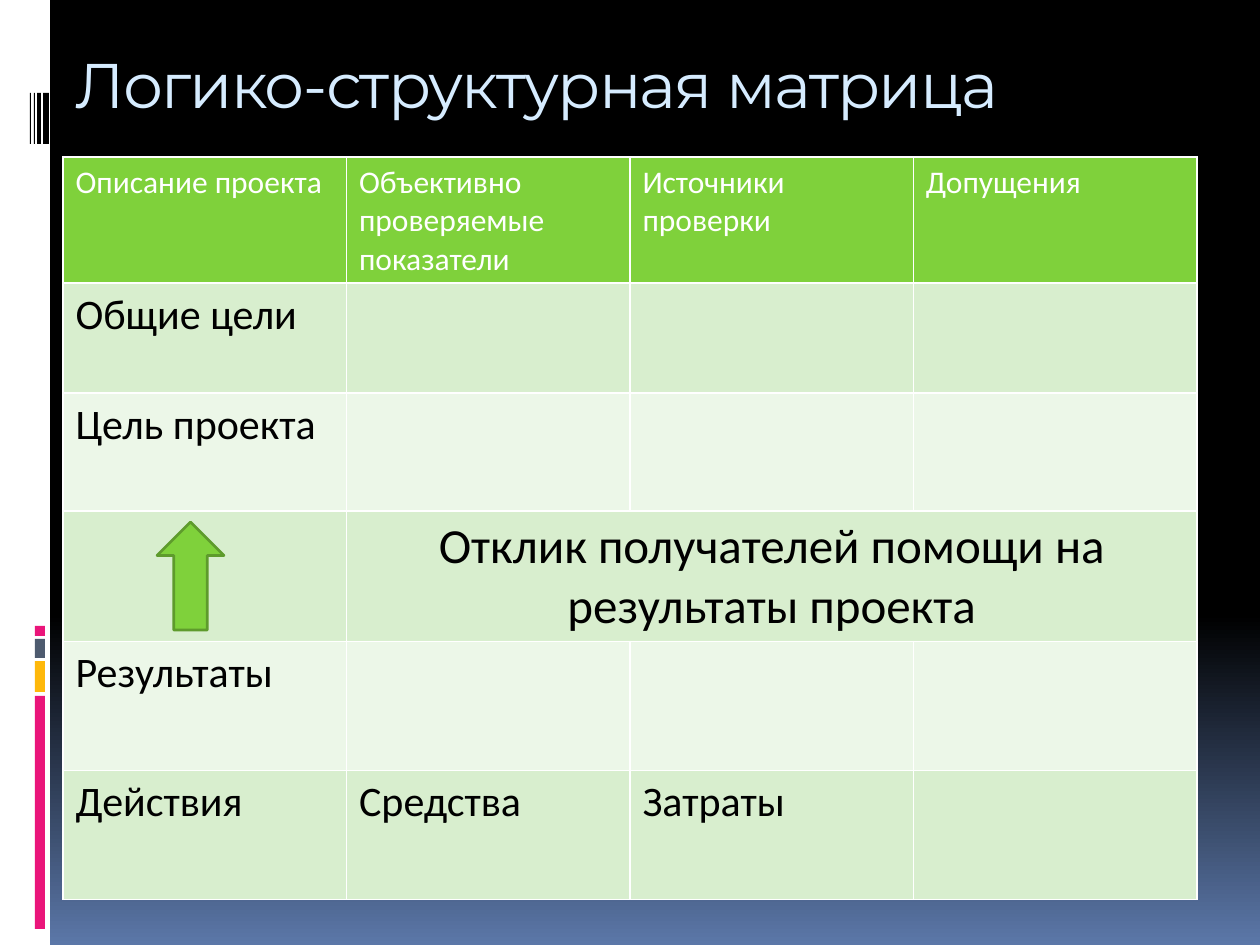
from copy import deepcopy

from lxml.etree import SubElement
from pptx import Presentation
from pptx.dml.color import RGBColor
from pptx.enum.shapes import MSO_SHAPE
from pptx.enum.text import MSO_ANCHOR, PP_ALIGN
from pptx.oxml.ns import qn
from pptx.util import Emu, Pt

EMU_PER_PX = 914400 // 126
WHITE, BLACK, GREEN = "FFFFFF", "000000", "7FD13B"
BANDS = ["D8EECE", "ECF7E8"]


def px(length):
    return Emu(length * EMU_PER_PX)


def color(hex_code):
    return RGBColor.from_string(hex_code)


def write(frame, text, *, size, font="Calibri", ink=BLACK,
          align=PP_ALIGN.LEFT, spacing=None):
    para = frame.paragraphs[0]
    para.alignment = align
    span = para.add_run()
    span.text = text
    span.font.size = Pt(size)
    span.font.name = font
    span.font.bold = False
    span.font.color.rgb = color(ink)
    if spacing is not None:
        span.font._element.set("spc", str(spacing * 100))


class Painter:
    def __init__(self, page):
        self.page = page

    def background(self, stops):
        fill = self.page.background.fill
        fill.gradient()
        fill.gradient_angle = 270
        stop_list = self.page.element.find(".//" + qn("a:gsLst"))
        while len(stop_list) < len(stops):
            stop_list.append(deepcopy(stop_list[-1]))
        for stop, (position, hex_code) in zip(fill.gradient_stops, stops):
            stop.position = position
            stop.color.rgb = color(hex_code)

    def shape(self, kind, left, top, width, height, fill, line=None):
        shape = self.page.shapes.add_shape(
            kind, px(left), px(top), px(width), px(height))
        shape.shadow.inherit = False
        shape.fill.solid()
        shape.fill.fore_color.rgb = color(fill)
        if line:
            shape.line.color.rgb = color(line)
            shape.line.width = Pt(1.5)
        else:
            shape.line.fill.background()

    def title(self, text, left, top, width, height):
        box = self.page.shapes.add_textbox(
            px(left), px(top), px(width), px(height))
        frame = box.text_frame
        frame.word_wrap = True
        frame.vertical_anchor = MSO_ANCHOR.TOP
        frame.margin_top = px(8)
        write(frame, text, size=36, font="Montserrat", ink="D6ECFF", spacing=-1)

    def cell(self, cell, fill):
        properties = cell._tc.get_or_add_tcPr()
        for side in ("lnL", "lnR", "lnT", "lnB"):
            border = SubElement(properties, qn("a:" + side), w=str(Pt(1)))
            paint = SubElement(border, qn("a:solidFill"))
            SubElement(paint, qn("a:srgbClr"), val=WHITE)
        cell.fill.solid()
        cell.fill.fore_color.rgb = color(fill)

    def table(self, left, top, width, height, row_heights, columns):
        frame = self.page.shapes.add_table(
            len(row_heights), columns, px(left), px(top), px(width), px(height))
        table = frame.table
        for row_index, row_height in enumerate(row_heights):
            table.rows[row_index].height = px(row_height)
            fill = BANDS[(row_index - 1) % 2] if row_index else GREEN
            for cell in table.rows[row_index].cells:
                self.cell(cell, fill)
        frame.height = px(height)
        return table


def main():
    deck = Presentation()
    deck.slide_width, deck.slide_height = px(1260), px(945)
    painter = Painter(deck.slides.add_slide(deck.slide_layouts[6]))
    painter.background([(0, BLACK), (0.65, BLACK), (1, "5B77A8")])

    # White side strip with coloured blocks and thin black bars
    painter.shape(MSO_SHAPE.RECTANGLE, 0, 0, 50, 945, WHITE)
    for top, height, fill in [(696, 233, "EA157A"), (661, 31, "FEB80A"),
                              (639, 19, "4E5B6F"), (626, 10, "EA157A")]:
        painter.shape(MSO_SHAPE.RECTANGLE, 35, top, 10, height, fill)
    for left, width in [(43, 6), (37, 4), (34, 1), (30, 1)]:
        painter.shape(MSO_SHAPE.RECTANGLE, left, 93, width, 51, BLACK)

    painter.title("Логико-структурная матрица", 63, 38, 1134, 119)

    # Matrix
    matrix = painter.table(63, 157, 1134, 741, [98, 110, 118, 110, 129, 129], 4)
    rows = {
        0: ["Описание проекта", "Объективно проверяемые показатели",
            "Источники проверки", "Допущения"],
        1: ["Общие цели"],
        2: ["Цель проекта"],
        4: ["Результаты"],
        5: ["Действия", "Средства", "Затраты"],
    }
    for row, texts in rows.items():
        style = {"size": 24} if row else {"size": 18, "ink": WHITE}
        for column, text in enumerate(texts):
            write(matrix.cell(row, column).text_frame, text, **style)

    # Response row: merged cell and upward arrow
    response = matrix.cell(3, 1)
    response.merge(matrix.cell(3, 3))
    write(response.text_frame, "Отклик получателей помощи на результаты проекта",
          size=28, align=PP_ALIGN.CENTER)
    painter.shape(MSO_SHAPE.UP_ARROW, 157, 522, 67, 108, GREEN, line="5E9B2C")

    deck.save("out.pptx")


if __name__ == "__main__":
    main()
